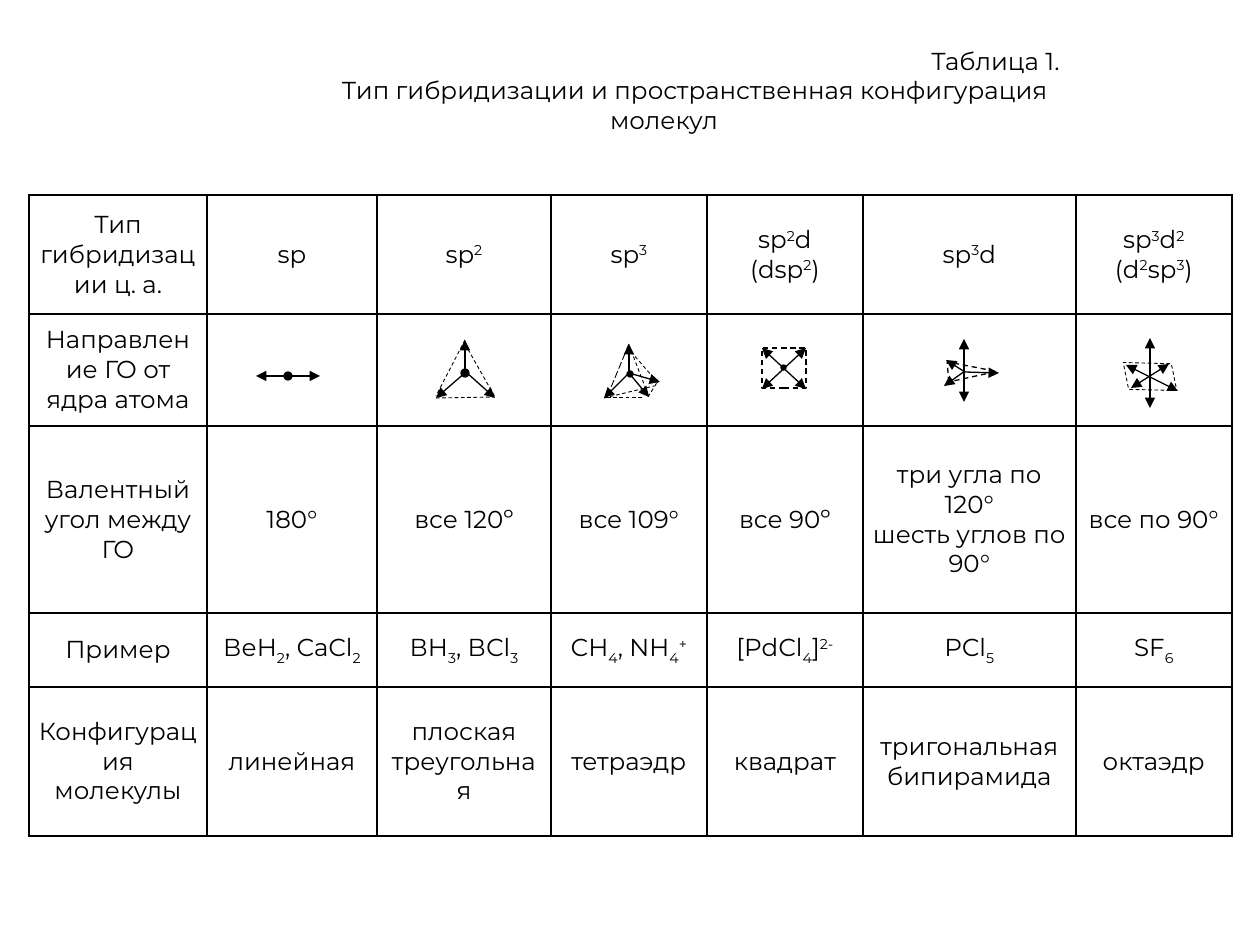
"""Slide with a table of hybridization types and the shapes of molecules."""
from lxml import etree
from pptx import Presentation
from pptx.dml.color import RGBColor
from pptx.enum.dml import MSO_LINE
from pptx.enum.shapes import MSO_CONNECTOR, MSO_SHAPE
from pptx.enum.text import MSO_ANCHOR, MSO_AUTO_SIZE, PP_ALIGN
from pptx.oxml.ns import qn
from pptx.util import Pt

BLACK = RGBColor(0, 0, 0)
WHITE = RGBColor(255, 255, 255)
FONT = "Montserrat"
DASH, LONG_DASH = MSO_LINE.DASH, MSO_LINE.LONG_DASH
CENTER, RIGHT = PP_ALIGN.CENTER, PP_ALIGN.RIGHT
MIDDLE = MSO_ANCHOR.MIDDLE
STRAIGHT = MSO_CONNECTOR.STRAIGHT
DOT = MSO_SHAPE.FLOWCHART_CONNECTOR
RECTANGLE = MSO_SHAPE.RECTANGLE
TRIANGLE = MSO_SHAPE.ISOSCELES_TRIANGLE
PARALLELOGRAM = MSO_SHAPE.PARALLELOGRAM
GROW = MSO_AUTO_SIZE.SHAPE_TO_FIT_TEXT

TITLE = [("Таблица 1.", RIGHT),
         ("Тип гибридизации и пространственная конфигурация молекул", CENTER)]
TITLE_BOX = (256, 39, 816, 102)
TITLE_INDENT = 62

TABLE_LEFT, TABLE_TOP = 29, 195
COLUMN_WIDTHS = [178, 170, 174, 156, 156, 213, 156]
ROW_HEIGHTS = [119, 112, 187, 74, 149]
CELL_INSET = 9
BASELINES = {"^": "30000", "_": "-25000"}
ROWS = [
    ["Тип гибридизации ц. а.", "sp", "sp|^2", "sp|^3", "sp|^2|d\n(dsp|^2|)",
     "sp|^3|d", "sp|^3|d|^2\n(d|^2|sp|^3|)"],
    ["Направление ГО от ядра атома", "", "", "", "", "", ""],
    ["Валентный угол между ГО", "180°", "все 120º", "все 109°", "все 90º",
     "три угла по 120°\nшесть углов по 90°", "все по 90°"],
    ["Пример", "ВеН|_2|, СаСl|_2", "ВН|_3|, ВСl|_3", "СН|_4|, NH|_4|^+",
     "[РdСl|_4|]|^2-", "РСl|_5", "SF|_6"],
    ["Конфигурация молекулы", "линейная", "плоская треугольная", "тетраэдр",
     "квадрат", "тригональная бипирамида", "октаэдр"],
]

# preset, box, rotation, adjustment, fill, line width
OUTLINES = [
    (RECTANGLE, (762, 348, 44, 40), 0, None, WHITE, 0.75),
    (TRIANGLE, (946, 357, 49, 20), 347.6, 0.06, WHITE, 0.75),
    (PARALLELOGRAM, (1131, 353, 38, 47), 258.6, 0.28, None, 0.5),
]
EDGES = [
    (465, 340, 436, 396, DASH), (436, 398, 494, 397, DASH),
    (465, 344, 495, 397, DASH),
    (629, 344, 607, 397, LONG_DASH), (607, 397, 644, 397, DASH),
    (629, 345, 649, 397, DASH), (627, 347, 658, 383, DASH),
    (648, 397, 658, 381, DASH), (604, 398, 654, 386, DASH),
]
ORBITALS = [
    (466, 372, 495, 398), (466, 372, 436, 398), (465, 373, 465, 340),
    (629, 373, 604, 398), (629, 373, 649, 397), (629, 373, 660, 382),
    (629, 371, 629, 344),
    (965, 372, 999, 373), (965, 371, 944, 386), (965, 372, 946, 360),
]
OPPOSITE_ORBITALS = [
    (256, 376, 320, 376),
    (806, 348, 762, 389), (762, 348, 806, 389),
    (964, 402, 964, 339),
    (1126, 365, 1178, 391), (1169, 364, 1131, 388), (1150, 338, 1150, 408),
]
NUCLEI = [(284, 372, 8), (461, 369, 8), (627, 371, 6), (781, 365, 5)]


def px(*lengths):
    return [round(length * 914400 / 126) for length in lengths]


def format_run(run):
    run.font.name = FONT
    run.font.size = Pt(14)
    run.font.color.rgb = BLACK


def add_border(cell):
    properties = cell._tc.get_or_add_tcPr()
    for position, side in enumerate(("lnL", "lnR", "lnT", "lnB")):
        border = etree.Element(qn(f"a:{side}"), w=str(Pt(1)))
        fill = etree.SubElement(border, qn("a:solidFill"))
        etree.SubElement(fill, qn("a:srgbClr"), val=str(BLACK))
        properties.insert(position, border)


def fill_cell(cell, content):
    cell.fill.background()
    add_border(cell)
    cell.vertical_anchor = MIDDLE
    cell.margin_left, cell.margin_right = px(CELL_INSET, CELL_INSET)
    cell.margin_top = cell.margin_bottom = 0
    frame = cell.text_frame
    frame.text = "\n" * content.count("\n")
    for paragraph, line in zip(frame.paragraphs, content.split("\n")):
        paragraph.alignment = CENTER
        for part in filter(None, line.split("|")):
            run = paragraph.add_run()
            run.text = part.lstrip("^_")
            format_run(run)
            if part[0] in BASELINES:
                run.font._element.set("baseline", BASELINES[part[0]])


def add_table(shapes):
    table = shapes.add_table(
        len(ROWS), len(COLUMN_WIDTHS),
        *px(TABLE_LEFT, TABLE_TOP, sum(COLUMN_WIDTHS), sum(ROW_HEIGHTS))).table
    table.first_row = table.horz_banding = False
    for column, width in zip(table.columns, px(*COLUMN_WIDTHS)):
        column.width = width
    for row, height, contents in zip(table.rows, px(*ROW_HEIGHTS), ROWS):
        row.height = height
        for cell, content in zip(row.cells, contents):
            fill_cell(cell, content)


def add_line(shapes, ends, width, dash=None, arrows=()):
    connector = shapes.add_connector(STRAIGHT, *px(*ends))
    connector.line.color.rgb = BLACK
    connector.line.width = Pt(width)
    if dash:
        connector.line.dash_style = dash
    for end in arrows:
        etree.SubElement(connector.line._get_or_add_ln(), qn(f"a:{end}"), type="triangle")
    etree.SubElement(connector._element.spPr, qn("a:effectLst"))


def add_figure(shapes, preset, box, fill, width):
    figure = shapes.add_shape(preset, *px(*box))
    figure.shadow.inherit = False
    if fill is None:
        figure.fill.background()
    else:
        figure.fill.solid()
        figure.fill.fore_color.rgb = fill
    figure.line.color.rgb = BLACK
    figure.line.width = Pt(width)
    return figure


def add_diagrams(shapes):
    for preset, box, rotation, adjustment, fill, width in OUTLINES:
        outline = add_figure(shapes, preset, box, fill, width)
        outline.line.dash_style = DASH
        outline.rotation = rotation
        if adjustment is not None:
            outline.adjustments[0] = adjustment
    for *ends, dash in EDGES:
        add_line(shapes, ends, 0.5, dash)
    for ends in ORBITALS:
        add_line(shapes, ends, 0.75, arrows=["tailEnd"])
    for ends in OPPOSITE_ORBITALS:
        add_line(shapes, ends, 0.75, arrows=["headEnd", "tailEnd"])
    for left, top, size in NUCLEI:
        add_figure(shapes, DOT, (left, top, size, size), BLACK, 0.75)


def add_title(shapes):
    frame = shapes.add_textbox(*px(*TITLE_BOX)).text_frame
    frame.word_wrap = True
    frame.auto_size = GROW
    frame.vertical_anchor = MIDDLE
    frame.text = "\n".join(line for line, _ in TITLE)
    for paragraph, (_, alignment) in zip(frame.paragraphs, TITLE):
        paragraph.alignment = alignment
        paragraph._p.get_or_add_pPr().set("indent", str(px(TITLE_INDENT)[0]))
        format_run(paragraph.runs[0])


def main():
    deck = Presentation()
    deck.slide_width, deck.slide_height = px(1260, 945)
    shapes = deck.slides.add_slide(deck.slide_layouts[6]).shapes
    add_table(shapes)
    add_diagrams(shapes)
    add_title(shapes)
    deck.save("out.pptx")


if __name__ == "__main__":
    main()
